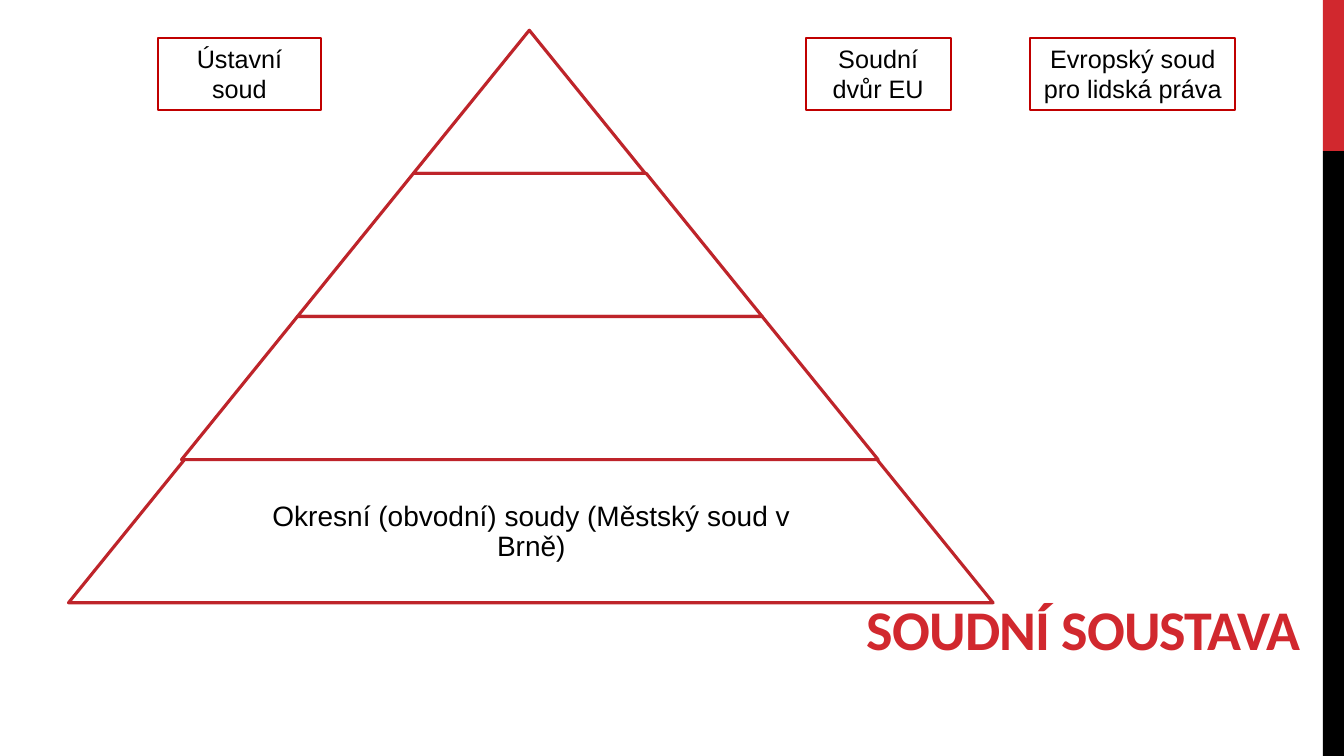
"""Build a slide with the pyramid of the court system."""
import pptx
import pptx.dml.color
import pptx.enum.shapes
import pptx.enum.text
import pptx.util

Inches = pptx.util.Inches
Pt = pptx.util.Pt
Kind = pptx.enum.shapes.MSO_SHAPE
Align = pptx.enum.text.PP_ALIGN
Anchor = pptx.enum.text.MSO_ANCHOR


def color(code):
    return pptx.dml.color.RGBColor.from_string(code)


def write(shape, text, size=18, font="Arial", ink="000000", bold=False,
          align=Align.CENTER, anchor=Anchor.TOP, pad=None, lead=None, track=None):
    frame = shape.text_frame
    frame.word_wrap = True
    frame.vertical_anchor = anchor
    if pad is not None:
        frame.margin_left = frame.margin_right = Inches(pad)
        frame.margin_top = frame.margin_bottom = Inches(pad)
    para = frame.paragraphs[0]
    para.alignment = align
    if lead:
        para.line_spacing = lead
    run = para.add_run()
    run.text = text
    run.font.name = font
    run.font.size = Pt(size)
    run.font.bold = bold
    run.font.color.rgb = color(ink)
    if track:
        run._r.get_or_add_rPr().set("spc", str(track))


class Board:
    red = "D1282E"
    edge = "BE242A"
    frame = "C00000"

    def __init__(self, slide):
        self.slide = slide

    def shape(self, kind, box, fill=None, line=None, width=1):
        item = self.slide.shapes.add_shape(kind, *map(Inches, box))
        item.shadow.inherit = False
        if fill:
            item.fill.solid()
            item.fill.fore_color.rgb = color(fill)
        else:
            item.fill.background()
        if line:
            item.line.color.rgb = color(line)
            item.line.width = Pt(width)
        else:
            item.line.fill.background()
        return item

    def bar(self, top, height, fill):
        self.shape(Kind.RECTANGLE, (13.12, top, 0.21, height), fill)

    def tier(self, left, top, width, height):
        item = self.shape(Kind.TRAPEZOID, (left, top, width, height),
                          "FFFFFF", self.edge, 2.25)
        item.adjustments[0] = 0.81

    def court(self, left, width, text):
        item = self.shape(Kind.RECTANGLE, (left, 0.38, width, 0.71),
                          line=self.frame, width=1.5)
        write(item, text)

    def label(self, box, text, **style):
        item = self.slide.shapes.add_textbox(*map(Inches, box))
        write(item, text, **style)


def main():
    deck = pptx.Presentation()
    deck.slide_width = Inches(13.33)
    deck.slide_height = Inches(7.5)
    board = Board(deck.slides.add_slide(deck.slide_layouts[6]))

    board.bar(0, 1.5, board.red)
    board.bar(1.5, 6, "000000")
    board.label((1.8, 5.66, 11.2, 0.95), "SOUDNÍ SOUSTAVA", size=40,
                font="Calibri", ink=board.red, bold=True, align=Align.RIGHT,
                anchor=Anchor.BOTTOM, track=-60)

    high = 1.42
    tiers = [(4.1, 2.3), (2.95, 4.61), (1.8, 6.91), (0.68, 9.17)]
    for row, (left, width) in enumerate(tiers):
        board.tier(left, 0.3 + row * high, width, high)
    board.label((2.29, 4.57, 5.96, high),
                "Okresní (obvodní) soudy (Městský soud v Brně)",
                size=20, anchor=Anchor.MIDDLE, pad=0.06, lead=0.9)

    for left, width, text in [(1.57, 1.61, "Ústavní soud"),
                              (7.99, 1.44, "Soudní dvůr EU"),
                              (10.22, 2.03, "Evropský soud pro lidská práva")]:
        board.court(left, width, text)

    deck.save("out.pptx")


if __name__ == "__main__":
    main()
